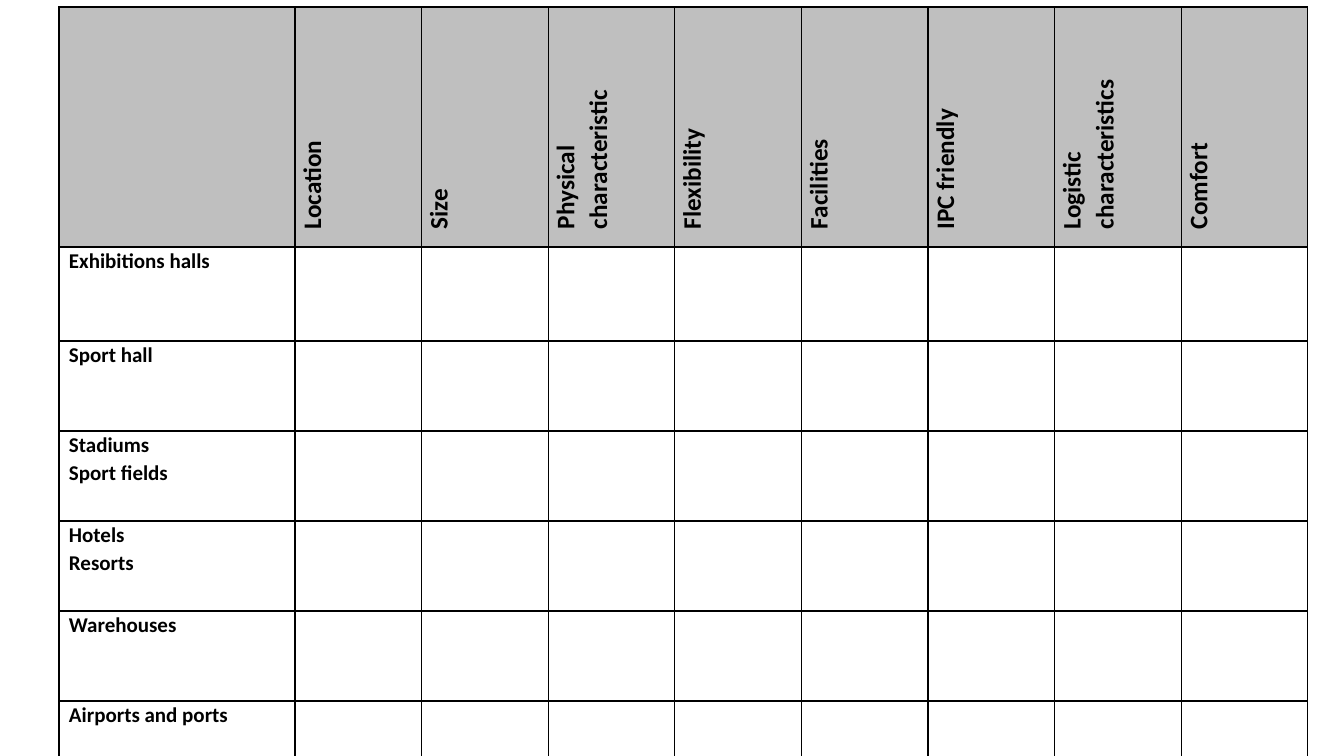
from lxml import etree
from pptx import Presentation
from pptx import util as u
from pptx.dml.color import RGBColor
from pptx.oxml.ns import qn

EMU_PER_PX = 914400 / 100.8
CRITERIA = ["Location", "Size", "Physical characteristic", "Flexibility", "Facilities",
            "IPC friendly", "Logistic characteristics", "Comfort"]
VENUES = ["Exhibitions halls", "Sport hall", "Stadiums\vSport fields", "Hotels\vResorts",
          "Warehouses", "Airports and ports"]


def px(length):
    return u.Emu(round(length * EMU_PER_PX))


def colour(code):
    return RGBColor.from_string(code)


def add_borders(cell, code="000000", points=1):
    properties = cell._tc.get_or_add_tcPr()
    for position, side in enumerate(("lnL", "lnR", "lnT", "lnB")):
        line = etree.Element(qn(f"a:{side}"), w=str(u.Pt(points)))
        fill = etree.SubElement(line, qn("a:solidFill"))
        etree.SubElement(fill, qn("a:srgbClr"), val=code)
        properties.insert(position, line)


def format_cell(cell, fill):
    cell.fill.solid()
    cell.fill.fore_color.rgb = colour(fill)
    cell.margin_left = cell.margin_right = px(10)
    cell.margin_top = cell.margin_bottom = 0
    add_borders(cell)


def write(cell, wording, size, indent=0, upward=False):
    para = cell.text_frame.paragraphs[0]
    para.text = wording
    para.line_spacing = 1.07
    para.font.size = u.Pt(size)
    for span in para.runs:
        span.font.name = "Calibri"
        span.font.size = u.Pt(size)
        span.font.bold = True
        span.font.color.rgb = colour("000000")
    if indent:
        para._p.get_or_add_pPr().set("marL", str(px(indent)))
    if upward:
        cell._tc.get_or_add_tcPr().set("vert", "vert270")


def add_venue_table(page, left, top, width, height):
    """Draw the grid of venues (rows) against criteria (columns)."""
    frame = page.shapes.add_table(len(VENUES) + 1, len(CRITERIA) + 1,
                                  px(left), px(top), px(width), px(height))
    table = frame.table
    table.first_row = table.horz_banding = False

    venue_width, header_height, first_height, row_height = 236, 177, 94, 90
    criterion_width = (width - venue_width) / len(CRITERIA)
    for index, column in enumerate(table.columns):
        column.width = px(criterion_width if index else venue_width)
    heights = [header_height, first_height] + [row_height] * (len(VENUES) - 1)
    for row, row_size in zip(table.rows, heights):
        row.height = px(row_size)

    for index, row in enumerate(table.rows):
        for cell in row.cells:
            format_cell(cell, "FFFFFF" if index else "BFBFBF")
    for index, criterion in enumerate(CRITERIA, 1):
        write(table.cell(0, index), criterion, 18, indent=8, upward=True)
    for index, venue in enumerate(VENUES, 1):
        write(table.cell(index, 0), venue, 15)


def main():
    deck = Presentation()
    deck.slide_width, deck.slide_height = px(1344), px(756)
    page = deck.slides.add_slide(deck.slide_layouts[6])
    add_venue_table(page, left=59, top=7, width=1249, height=721)
    deck.save("out.pptx")


if __name__ == "__main__":
    main()
